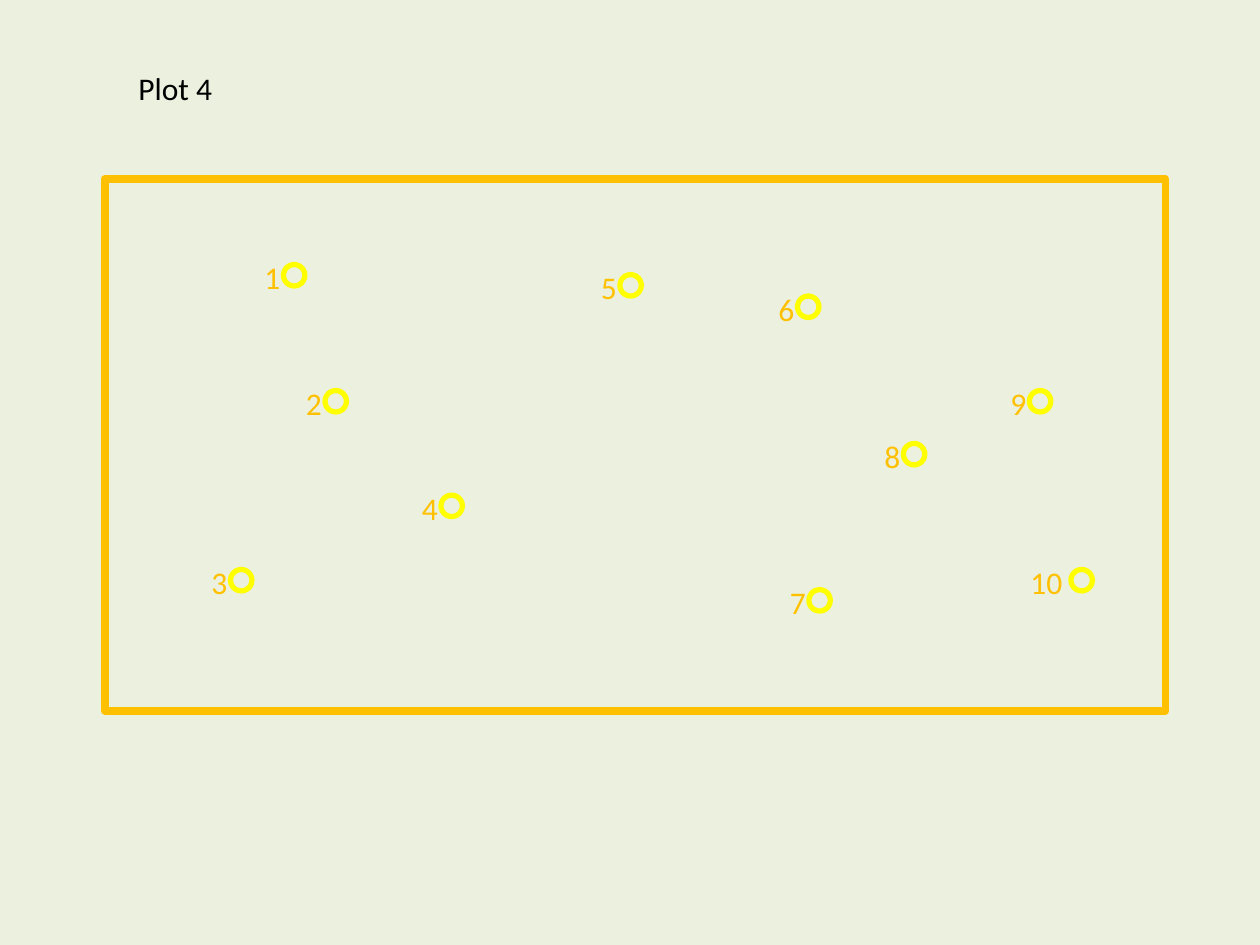
from pptx import Presentation
from pptx.dml.color import RGBColor
from pptx.enum.shapes import MSO_SHAPE as Shape
from pptx.enum.text import MSO_AUTO_SIZE as AutoSize
from pptx.util import Inches, Pt

BACKGROUND = RGBColor(0xEB, 0xF1, 0xDE)
ORANGE = RGBColor(0xFF, 0xC0, 0x00)
YELLOW = RGBColor(0xFF, 0xFF, 0x00)
BLACK = RGBColor(0x00, 0x00, 0x00)

RING_SIZE = 0.17
TEXT_HEIGHT = 0.4

# Left and top of each label; points are numbered in this order.
POINTS = [
    (2, 2), (2.33, 3), (1.58, 4.42), (3.25, 3.83), (4.67, 2.08),
    (6.08, 2.25), (6.17, 4.58), (6.92, 3.42), (7.92, 3), (8.08, 4.42),
]


def add_outline(shapes, kind, left, top, width, height, color, weight):
    s = shapes.add_shape(kind, Inches(left), Inches(top),
                         Inches(width), Inches(height))
    s.shadow.inherit = False
    s.fill.background()
    s.line.color.rgb = color
    s.line.width = Pt(weight)


def add_text(shapes, text, left, top, width, color):
    sp = shapes.add_textbox(Inches(left), Inches(top),
                            Inches(width), Inches(TEXT_HEIGHT))
    tf = sp.text_frame
    tf.word_wrap = False
    tf.auto_size = AutoSize.SHAPE_TO_FIT_TEXT
    p = tf.paragraphs[0]
    p.text = text
    p.font.name = "Calibri"
    p.font.size = Pt(18)
    p.font.color.rgb = color


def add_point(slide, number, left, top):
    """Group a ring with its number; two digits need a wider label."""
    label_width, ring_offset = (0.33, 0.25) if number < 10 else (0.52, 0.42)
    shapes = slide.shapes.add_group_shape().shapes
    add_outline(shapes, Shape.OVAL, left + ring_offset, top + 0.1,
                RING_SIZE, RING_SIZE, YELLOW, 3)
    add_text(shapes, str(number), left, top, label_width, ORANGE)


def main():
    prs = Presentation()
    prs.slide_width, prs.slide_height = Inches(10), Inches(7.5)
    slide = prs.slides.add_slide(prs.slide_layouts[6])
    slide.background.fill.solid()
    slide.background.fill.fore_color.rgb = BACKGROUND

    add_outline(slide.shapes, Shape.RECTANGLE, 0.83, 1.42, 8.42, 4.22, ORANGE, 4.5)
    for number, (left, top) in enumerate(POINTS, start=1):
        add_point(slide, number, left, top)
    add_text(slide.shapes, "Plot 4", 1, 0.5, 0.79, BLACK)
    prs.save("out.pptx")


if __name__ == "__main__":
    main()
